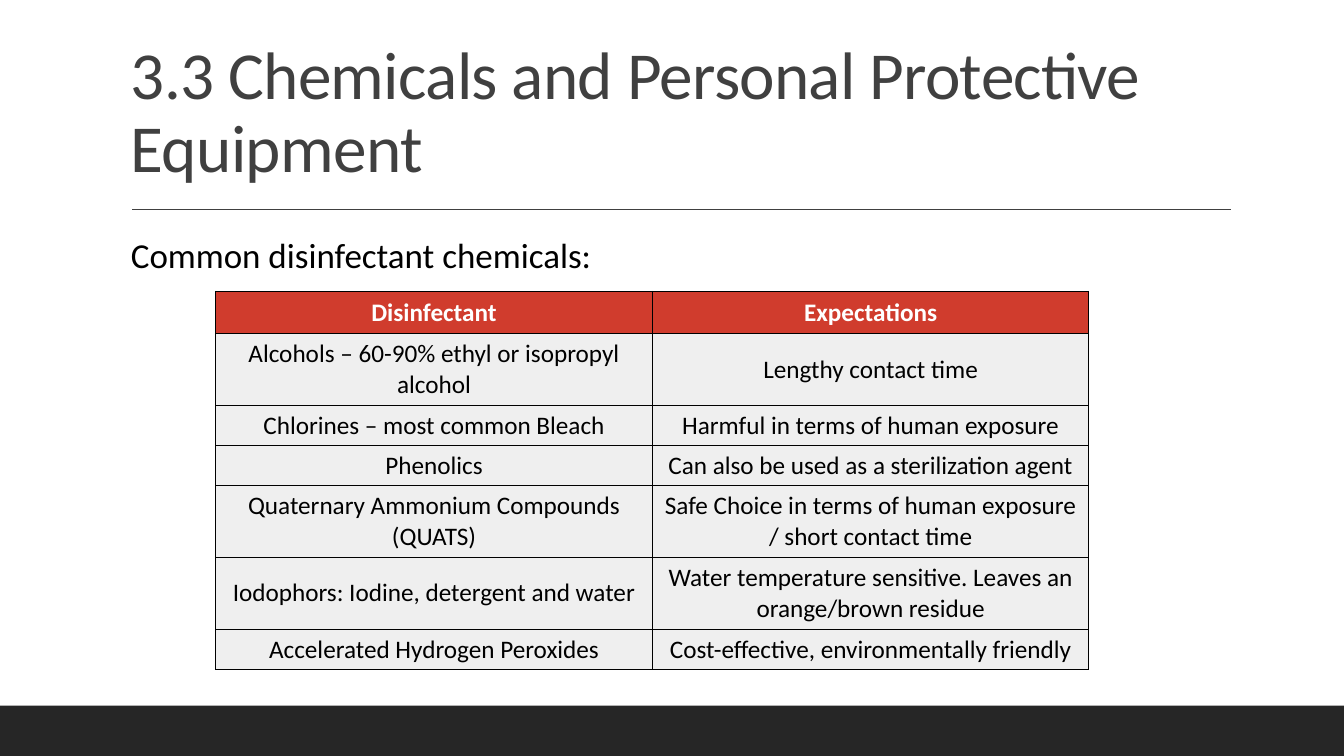
from lxml import etree
from pptx import Presentation
from pptx.dml.color import RGBColor
from pptx.enum import shapes, text
from pptx.oxml import ns
from pptx.util import Inches, Pt

FONT = "Calibri"
COLORS = {
    "footer": "262626",
    "title": "404040",
    "black": "000000",
    "white": "FFFFFF",
    "header": "D03C2D",
    "body": "EFEFEF",
}
ROWS = [
    ("Disinfectant", "Expectations"),
    ("Alcohols – 60-90% ethyl or isopropyl alcohol", "Lengthy contact time"),
    ("Chlorines – most common Bleach", "Harmful in terms of human exposure"),
    ("Phenolics", "Can also be used as a sterilization agent"),
    ("Quaternary Ammonium Compounds (QUATS)",
     "Safe Choice in terms of human exposure / short contact time"),
    ("Iodophors: Iodine, detergent and water",
     "Water temperature sensitive. Leaves an orange/brown residue"),
    ("Accelerated Hydrogen Peroxides", "Cost-effective, environmentally friendly"),
]
ROW_HEIGHTS = [0.42, 0.71, 0.4, 0.4, 0.71, 0.71, 0.4]
COLUMN_WIDTH = 4.33


def color(name):
    return RGBColor.from_string(COLORS[name])


def style_paragraph(paragraph, size, color_name, bold=False):
    font = paragraph.font
    font.name = FONT
    font.size = Pt(size)
    font.bold = bold
    font.color.rgb = color(color_name)


def add_footer_bar(slide):
    bar = slide.shapes.add_shape(
        shapes.MSO_SHAPE.RECTANGLE, Inches(0), Inches(7), Inches(13.33), Inches(0.5))
    bar.shadow.inherit = False
    bar.fill.solid()
    bar.fill.fore_color.rgb = color("footer")
    bar.line.fill.background()


def add_title_rule(slide):
    rule = slide.shapes.add_connector(
        shapes.MSO_CONNECTOR.STRAIGHT,
        Inches(1.31), Inches(2.08), Inches(12.21), Inches(2.08))
    rule.line.color.rgb = color("title")
    rule.line.width = Pt(1)
    etree.SubElement(rule._element.spPr, ns.qn("a:effectLst"))


def add_text(slide, content, top, height, size, color_name, anchor):
    box = slide.shapes.add_textbox(Inches(1.2), Inches(top), Inches(11), Inches(height))
    frame = box.text_frame
    frame.word_wrap = True
    frame.vertical_anchor = anchor
    paragraph = frame.paragraphs[0]
    paragraph.text = content
    paragraph.line_spacing = 0.9
    style_paragraph(paragraph, size, color_name)
    return paragraph


def add_borders(cell):
    properties = cell._tc.get_or_add_tcPr()
    for position, side in enumerate(("lnL", "lnR", "lnT", "lnB")):
        line = etree.Element(ns.qn(f"a:{side}"), w=str(Pt(0.75)))
        fill = etree.SubElement(line, ns.qn("a:solidFill"))
        etree.SubElement(fill, ns.qn("a:srgbClr"), val=COLORS["black"])
        properties.insert(position, line)


def fill_cell(cell, content, is_header):
    cell.fill.solid()
    cell.fill.fore_color.rgb = color("header" if is_header else "body")
    cell.vertical_anchor = text.MSO_ANCHOR.MIDDLE
    cell.text = content
    paragraph = cell.text_frame.paragraphs[0]
    paragraph.alignment = text.PP_ALIGN.CENTER
    style_paragraph(paragraph, 18, "white" if is_header else "black", is_header)
    add_borders(cell)


def add_disinfectant_table(slide):
    columns = len(ROWS[0])
    table = slide.shapes.add_table(
        len(ROWS), columns, Inches(2.14), Inches(2.89),
        Inches(COLUMN_WIDTH * columns), Inches(sum(ROW_HEIGHTS))).table
    table.horz_banding = False
    for column in table.columns:
        column.width = Inches(COLUMN_WIDTH)
    for row_index, (contents, height) in enumerate(zip(ROWS, ROW_HEIGHTS)):
        table.rows[row_index].height = Inches(height)
        for column_index, content in enumerate(contents):
            fill_cell(table.cell(row_index, column_index), content, row_index == 0)


def main():
    presentation = Presentation()
    presentation.slide_width = Inches(13.33)
    presentation.slide_height = Inches(7.5)
    slide = presentation.slides.add_slide(presentation.slide_layouts[6])
    add_footer_bar(slide)
    add_title_rule(slide)
    title = add_text(slide, "3.3 Chemicals and Personal Protective Equipment",
                     0.31, 1.59, 48, "title", text.MSO_ANCHOR.BOTTOM)
    title.runs[0]._r.get_or_add_rPr().set("spc", "-50")
    add_text(slide, "Common disinfectant chemicals:",
             2.31, 0.59, 25, "black", text.MSO_ANCHOR.TOP)
    add_disinfectant_table(slide)
    presentation.save("out.pptx")


if __name__ == "__main__":
    main()
